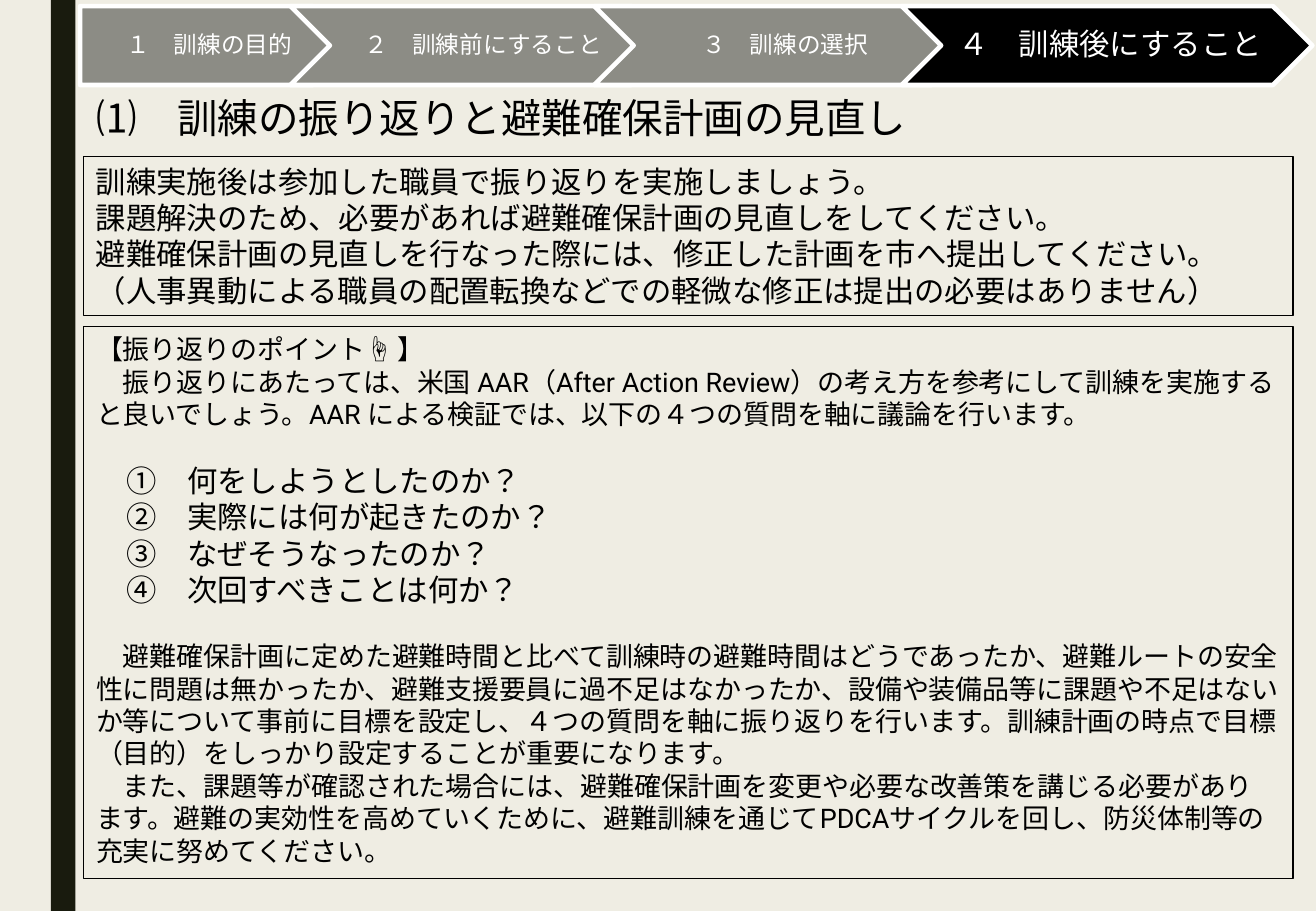
from dataclasses import dataclass
from lxml import etree
from pptx import Presentation
from pptx import util as u
from pptx.dml.color import RGBColor
from pptx.enum import lang, shapes, text
from pptx.oxml import ns

CELL = u.Inches(0.1)
COLS, ROWS = 108.3, 75
LEFT, WIDE = 6.9, 99.5
INK, WHITE, GRAY, PAPER, BAR = "000000", "FFFFFF", "8C8C85", "EFEDE3", "191B0E"
KANJI = "Noto Sans CJK JP"


@dataclass
class Step:
    label: str
    col: float
    span: float
    fill: str = GRAY
    size: int = 14
    kind: shapes.MSO_SHAPE = shapes.MSO_SHAPE.CHEVRON


@dataclass
class Para:
    lines: list[str]
    size: int = 16
    face: str = "Roboto"
    color: str = INK
    align: text.PP_ALIGN = text.PP_ALIGN.LEFT
    pitch: float | u.Length | None = None
    margin: int = 0
    indent: int = 0
    before: int = 0


STEPS = [
    Step("１　訓練の目的", 6.6, 22.4, kind=shapes.MSO_SHAPE.PENTAGON),
    Step("２　訓練前にすること", 23.9, 31.3),
    Step("３　訓練の選択", 48.9, 31),
    Step("４　訓練後にすること", 74.2, 33.8, INK, 18),
]
HEAD = "⑴　訓練の振り返りと避難確保計画の見直し"
NOTICE = [
    "訓練実施後は参加した職員で振り返りを実施しましょう。",
    "課題解決のため、必要があれば避難確保計画の見直しをしてください。",
    "避難確保計画の見直しを行なった際には、修正した計画を市へ提出してください。",
    "（人事異動による職員の配置転換などでの軽微な修正は提出の必要はありません）",
]
POINT = "【振り返りのポイント☝ 】"
INTRO = (
    "振り返りにあたっては、米国 AAR（After Action Review）の考え方を参考にして訓練を"
    "実施すると良いでしょう。AAR による検証では、以下の４つの質問を軸に議論を行います。"
)
ASKS = [
    "①　何をしようとしたのか？",
    "②　実際には何が起きたのか？",
    "③　なぜそうなったのか？",
    "④　次回すべきことは何か？",
]
GOALS = (
    "避難確保計画に定めた避難時間と比べて訓練時の避難時間はどうであったか、"
    "避難ルートの安全性に問題は無かったか、避難支援要員に過不足はなかったか、"
    "設備や装備品等に課題や不足はないか等について事前に目標を設定し、"
    "４つの質問を軸に振り返りを行います。訓練計画の時点で目標（目的）を"
    "しっかり設定することが重要になります。"
)
CYCLE = (
    "また、課題等が確認された場合には、避難確保計画を変更や必要な改善策を講じる"
    "必要があります。避難の実効性を高めていくために、避難訓練を通じてPDCAサイクルを回し、"
    "防災体制等の充実に努めてください。"
)


def cells(*counts: float) -> list[int]:
    return [round(count * CELL) for count in counts]


def paint(part, color: str) -> None:
    part.solid()
    part.fore_color.rgb = RGBColor.from_string(color)


def edge(item, color: str, width: float) -> None:
    paint(item.line.fill, color)
    item.line.width = u.Pt(width)


def place(item, col: float, row: float, wide: float, tall: float) -> None:
    item.left, item.top, item.width, item.height = cells(col, row, wide, tall)


def draw(slide, kind, col: float, row: float, wide: float, tall: float):
    item = slide.shapes.add_shape(kind, *cells(col, row, wide, tall))
    item.shadow.inherit = False
    return item


def write(item, paras: list[Para], anchor=text.MSO_ANCHOR.TOP) -> None:
    frame = item.text_frame
    frame.word_wrap = True
    frame.auto_size = text.MSO_AUTO_SIZE.NONE
    frame.vertical_anchor = anchor
    for index, para in enumerate(paras):
        block = frame.add_paragraph() if index else frame.paragraphs[0]
        block.alignment = para.align
        block.space_before, block.space_after = u.Pt(para.before), u.Pt(0)
        block.line_spacing = para.pitch
        props = block._p.get_or_add_pPr()
        props.set("marL", str(u.Pt(para.margin)))
        props.set("indent", str(u.Pt(para.indent)))
        etree.SubElement(props, ns.qn("a:buNone"))
        for order, line in enumerate(para.lines):
            if order:
                block.add_line_break()
            run = block.add_run()
            run.text = line
            font = run.font
            font.size, font.name = u.Pt(para.size), para.face
            font.language_id = lang.MSO_LANGUAGE_ID.JAPANESE
            paint(font.fill, para.color)
            east = etree.SubElement(run._r.get_or_add_rPr(), ns.qn("a:ea"))
            east.set("typeface", KANJI)


def flow(slide, step: Step) -> None:
    item = draw(slide, step.kind, step.col, 0.5, step.span, 6.5)
    paint(item.fill, step.fill)
    edge(item, WHITE, 2.75)
    frame = item.text_frame
    frame.margin_left, frame.margin_right = cells(0.7, 0.2)
    frame.margin_top, frame.margin_bottom = cells(0.4, 0.4)
    label = Para([step.label], step.size, color=WHITE, align=text.PP_ALIGN.CENTER, pitch=0.9)
    write(item, [label], text.MSO_ANCHOR.MIDDLE)


def main() -> None:
    deck = Presentation()
    deck.slide_width, deck.slide_height = cells(COLS, ROWS)
    slide = deck.slides.add_slide(deck.slide_layouts[1])
    paint(slide.background.fill, PAPER)

    bar = draw(slide, shapes.MSO_SHAPE.RECTANGLE, 4.2, 0, 2, ROWS)
    paint(bar.fill, BAR)
    bar.line.fill.background()

    title, body = slide.placeholders
    place(title, LEFT, 7.1, 91, 5)
    write(title, [Para([HEAD], 24, KANJI, pitch=u.Pt(29))])

    note = draw(slide, shapes.MSO_SHAPE.RECTANGLE, LEFT, 12.9, WIDE, 13.1)
    note.fill.background()
    edge(note, INK, 0.75)
    write(note, [Para(NOTICE, 18, "Arial", pitch=u.Pt(21.6))])

    for step in STEPS:
        flow(slide, step)

    place(body, LEFT, 26.9, WIDE, 45.4)
    edge(body, INK, 0.75)
    tight, loose = u.Pt(19.2), u.Pt(21.6)
    asks = [
        Para([ask], 18, pitch=loose, margin=18, before=0 if index else 19)
        for index, ask in enumerate(ASKS)
    ]
    write(body, [
        Para([POINT], pitch=tight),
        Para([INTRO], pitch=tight, indent=16),
        *asks,
        Para([GOALS], pitch=tight, indent=16, before=19),
        Para([CYCLE], pitch=tight, indent=16),
    ])
    deck.save("out.pptx")


if __name__ == "__main__":
    main()
